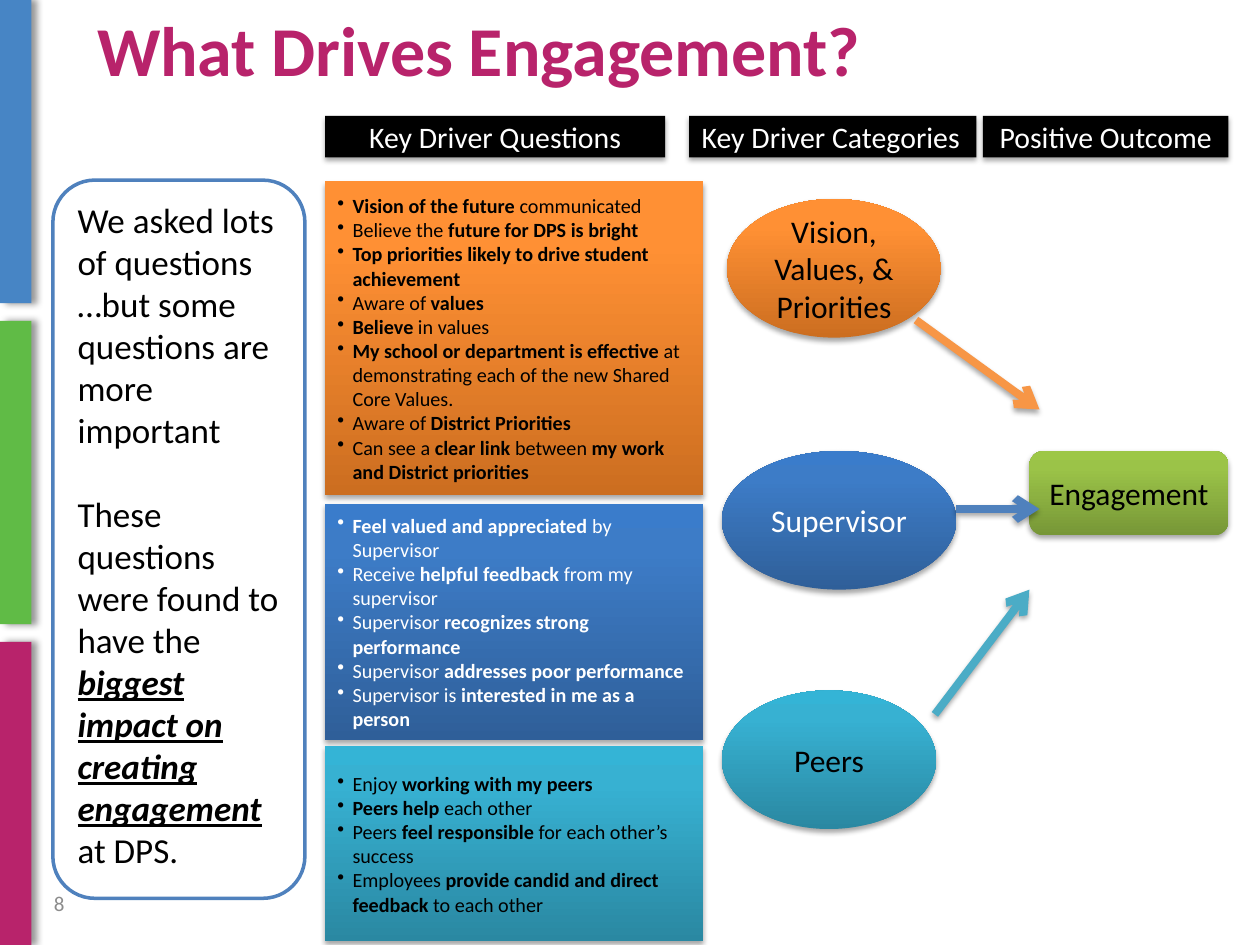
import pptx
import pptx.dml.color
import pptx.enum.shapes
import pptx.enum.text
import pptx.oxml
import pptx.oxml.ns
import pptx.util
from copy import deepcopy

Inches = pptx.util.Inches
Pt = pptx.util.Pt
RGBColor = pptx.dml.color.RGBColor
SHAPE = pptx.enum.shapes.MSO_SHAPE
ALIGN = pptx.enum.text.PP_ALIGN
ANCHOR = pptx.enum.text.MSO_ANCHOR
qn = pptx.oxml.ns.qn

FONT = "Calibri"
BLACK = RGBColor(0x00, 0x00, 0x00)
WHITE = RGBColor(0xFF, 0xFF, 0xFF)
GREY = RGBColor(0x8C, 0x8C, 0x8C)
MAGENTA = RGBColor(0xB8, 0x23, 0x6B)
LEAF = RGBColor(0x60, 0xBB, 0x46)
SKY = RGBColor(0x47, 0x85, 0xC5)
BLUE_LINE = RGBColor(0x4F, 0x81, 0xBD)
ORANGE_LINE = RGBColor(0xF7, 0x96, 0x46)
TEAL_LINE = RGBColor(0x4B, 0xAC, 0xC6)
GREEN = (RGBColor(0x77, 0x97, 0x37), RGBColor(0x9B, 0xC3, 0x48), RGBColor(0x9D, 0xC7, 0x46))
BLUE = (RGBColor(0x2F, 0x5F, 0x99), RGBColor(0x3D, 0x7C, 0xC7), RGBColor(0x3A, 0x7C, 0xCB))
ORANGE = (RGBColor(0xCC, 0x6E, 0x20), RGBColor(0xFF, 0x90, 0x34), RGBColor(0xFF, 0x91, 0x36))
TEAL = (RGBColor(0x2A, 0x88, 0xA2), RGBColor(0x37, 0xB1, 0xD2), RGBColor(0x34, 0xB4, 0xD6))

VISION = [
    "|Vision of the future |communicated",
    "Believe the |future for DPS is bright",
    "|Top priorities likely to drive student achievement",
    "Aware of |values",
    "|Believe| in values",
    "|My school or department is effective |at demonstrating each of the new Shared Core Values.",
    "Aware of |District Priorities",
    "Can see a |clear link |between |my work and District priorities",
]
SUPERVISOR = [
    "|Feel valued and appreciated |by Supervisor",
    "Receive |helpful feedback |from my supervisor",
    "Supervisor |recognizes strong performance",
    "Supervisor |addresses poor performance",
    "Supervisor is |interested in me as a person",
]
PEERS = [
    "Enjoy |working with my peers",
    "|Peers help |each other",
    "Peers |feel responsible |for each other’s success",
    "Employees |provide candid and direct feedback |to each other",
]
INTRO = [
    "We asked lots of questions …but some questions are more important",
    "These questions were found to have the |biggest impact on creating engagement |at DPS.",
]


def inches(box):
    """Turn a box in inches into lengths."""
    return [Inches(v) for v in box]


def set_font(p, size, color):
    """Set the font of a whole paragraph."""
    p.font.name = FONT
    p.font.size = Pt(size)
    p.font.color.rgb = color


def add_runs(p, text):
    """Write text in which every second part between bars is strong."""
    strong_runs = []
    for i, part in enumerate(text.split("|")):
        if part:
            r = p.add_run()
            r.text = part
            r.font.bold = i % 2 == 1
            if i % 2:
                strong_runs.append(r)
    return strong_runs


def add_shadow(sp, alpha=35, blur=3.1, dist=1.8, angle=90):
    """Give a shape or connector an outer shadow."""
    sp_pr = sp._element.spPr
    for old in sp_pr.findall(qn("a:effectLst")):
        sp_pr.remove(old)
    sp_pr.append(pptx.oxml.parse_xml(
        f'<a:effectLst {pptx.oxml.ns.nsdecls("a")}>'
        f'<a:outerShdw blurRad="{Pt(blur)}" dist="{Pt(dist)}" dir="{angle * 60000}" rotWithShape="0">'
        f'<a:srgbClr val="000000"><a:alpha val="{alpha * 1000}"/></a:srgbClr>'
        '</a:outerShdw></a:effectLst>'))


def fill_gradient(sp, colors):
    """Fill a shape with three stops running upwards."""
    sp.fill.gradient()
    sp.fill.gradient_angle = 90
    stops = sp._element.spPr.find(qn("a:gradFill")).find(qn("a:gsLst"))
    stops.append(deepcopy(stops[-1]))
    for stop, position, color in zip(sp.fill.gradient_stops, (0, 0.8, 1), colors):
        stop.position = position
        stop.color.rgb = color


def add_block(s, kind, box, fill):
    """Add a borderless shape with a plain or gradient fill."""
    sp = s.shapes.add_shape(kind, *inches(box))
    sp.shadow.inherit = False
    if isinstance(fill, RGBColor):
        sp.fill.solid()
        sp.fill.fore_color.rgb = fill
    else:
        fill_gradient(sp, fill)
    sp.line.fill.background()
    return sp


def add_sidebar(s, box):
    """Stack three coloured bars down the box."""
    left, top, width, height = box
    gap = 0.14
    bar = (height - 2 * gap) / 3
    for i, color in enumerate((SKY, LEAF, MAGENTA)):
        sp = add_block(s, SHAPE.RECTANGLE, (left, top + i * (bar + gap), width, bar), color)
        add_shadow(sp, 40, 4, 3, 0)


def add_title(s, box):
    """Place and format the title."""
    sp = s.shapes.title
    sp.left, sp.top, sp.width, sp.height = inches(box)
    tf = sp.text_frame
    tf.vertical_anchor = ANCHOR.TOP
    tf.text = "What Drives Engagement?"
    p = tf.paragraphs[0]
    p.alignment = ALIGN.LEFT
    set_font(p, 40, MAGENTA)
    p.font.bold = True


def add_label(s, kind, box, fill, text, color, size=18, align=ALIGN.CENTER):
    """Add a shadowed shape with one line of text."""
    sp = add_block(s, kind, box, fill)
    add_shadow(sp)
    tf = sp.text_frame
    tf.vertical_anchor = ANCHOR.MIDDLE
    tf.text = text
    p = tf.paragraphs[0]
    p.alignment = align
    set_font(p, size, color)


def add_questions(s, box, fill, items, color):
    """Add a gradient panel with a bulleted list of questions."""
    sp = add_block(s, SHAPE.RECTANGLE, box, fill)
    add_shadow(sp)
    tf = sp.text_frame
    tf.vertical_anchor = ANCHOR.MIDDLE
    for i, item in enumerate(items):
        p = tf.add_paragraph() if i else tf.paragraphs[0]
        p.alignment = ALIGN.LEFT
        p_pr = p._p.get_or_add_pPr()
        p_pr.set("marL", str(Inches(0.12)))
        p_pr.set("indent", str(-Inches(0.12)))
        p_pr.append(pptx.oxml.parse_xml(f'<a:buChar {pptx.oxml.ns.nsdecls("a")} char="•"/>'))
        add_runs(p, item)
        set_font(p, 11.5, color)


def add_arrow(s, ends, color):
    """Draw a thick arrow between two points."""
    sp = s.shapes.add_connector(pptx.enum.shapes.MSO_CONNECTOR.STRAIGHT, *inches(ends))
    sp.line.color.rgb = color
    sp.line.width = Pt(4.5)
    sp.line._get_or_add_ln().append(
        pptx.oxml.parse_xml(f'<a:tailEnd {pptx.oxml.ns.nsdecls("a")} type="arrow"/>'))
    add_shadow(sp)


def add_intro(s, box):
    """Add the outlined panel with the introduction."""
    sp = add_block(s, SHAPE.ROUNDED_RECTANGLE, box, WHITE)
    sp.line.color.rgb = BLUE_LINE
    sp.line.width = Pt(2)
    tf = sp.text_frame
    tf.vertical_anchor = ANCHOR.TOP
    for i, text in enumerate(INTRO):
        p = tf.add_paragraph() if i else tf.paragraphs[0]
        p.alignment = ALIGN.LEFT
        if i:
            p.space_before = Pt(24)
        for r in add_runs(p, text):
            r.font.italic = r.font.underline = True
        set_font(p, 20, BLACK)


def add_page_number(s, box):
    """Add the page number."""
    tf = s.shapes.add_textbox(*inches(box)).text_frame
    tf.word_wrap = True
    tf.vertical_anchor = ANCHOR.MIDDLE
    tf.text = "8"
    set_font(tf.paragraphs[0], 12, GREY)


def main():
    """Build the slide."""
    prs = pptx.Presentation()
    prs.slide_width, prs.slide_height = Inches(10), Inches(7.5)
    s = prs.slides.add_slide(prs.slide_layouts[5])
    add_sidebar(s, (0, 0, 0.25, 7.5))
    add_title(s, (0.67, 0, 9, 1))
    for left, width, text, align in ((2.58, 2.7, "Key Driver Questions", ALIGN.CENTER),
                                     (5.47, 2.28, "Key Driver Categories", ALIGN.LEFT),
                                     (7.8, 1.95, "Positive Outcome", ALIGN.CENTER)):
        add_label(s, SHAPE.RECTANGLE, (left, 0.92, width, 0.33), BLACK, text, WHITE, 17, align)
    add_label(s, SHAPE.ROUNDED_RECTANGLE, (8.17, 3.58, 1.58, 0.67), GREEN, "Engagement", BLACK)
    add_label(s, SHAPE.OVAL, (5.77, 1.58, 1.7, 1.1), ORANGE, "Vision, Values, & Priorities", BLACK)
    add_label(s, SHAPE.OVAL, (5.73, 3.58, 1.86, 1.1), BLUE, "Supervisor", WHITE)
    add_label(s, SHAPE.OVAL, (5.73, 5.48, 1.7, 1.1), TEAL, "Peers", BLACK)
    add_arrow(s, (7.27, 2.54, 8.25, 3.25), ORANGE_LINE)
    add_arrow(s, (7.59, 4.04, 8.25, 4.04), BLUE_LINE)
    add_arrow(s, (7.42, 5.67, 8.17, 4.68), TEAL_LINE)
    add_page_number(s, (0.33, 6.97, 2.33, 0.4))
    add_questions(s, (2.58, 1.44, 3, 2.49), ORANGE, VISION, BLACK)
    add_questions(s, (2.58, 4, 3, 1.87), BLUE, SUPERVISOR, WHITE)
    add_questions(s, (2.58, 5.92, 3, 1.55), TEAL, PEERS, BLACK)
    add_intro(s, (0.42, 1.43, 2, 5.7))
    prs.save("out.pptx")


if __name__ == "__main__":
    main()
